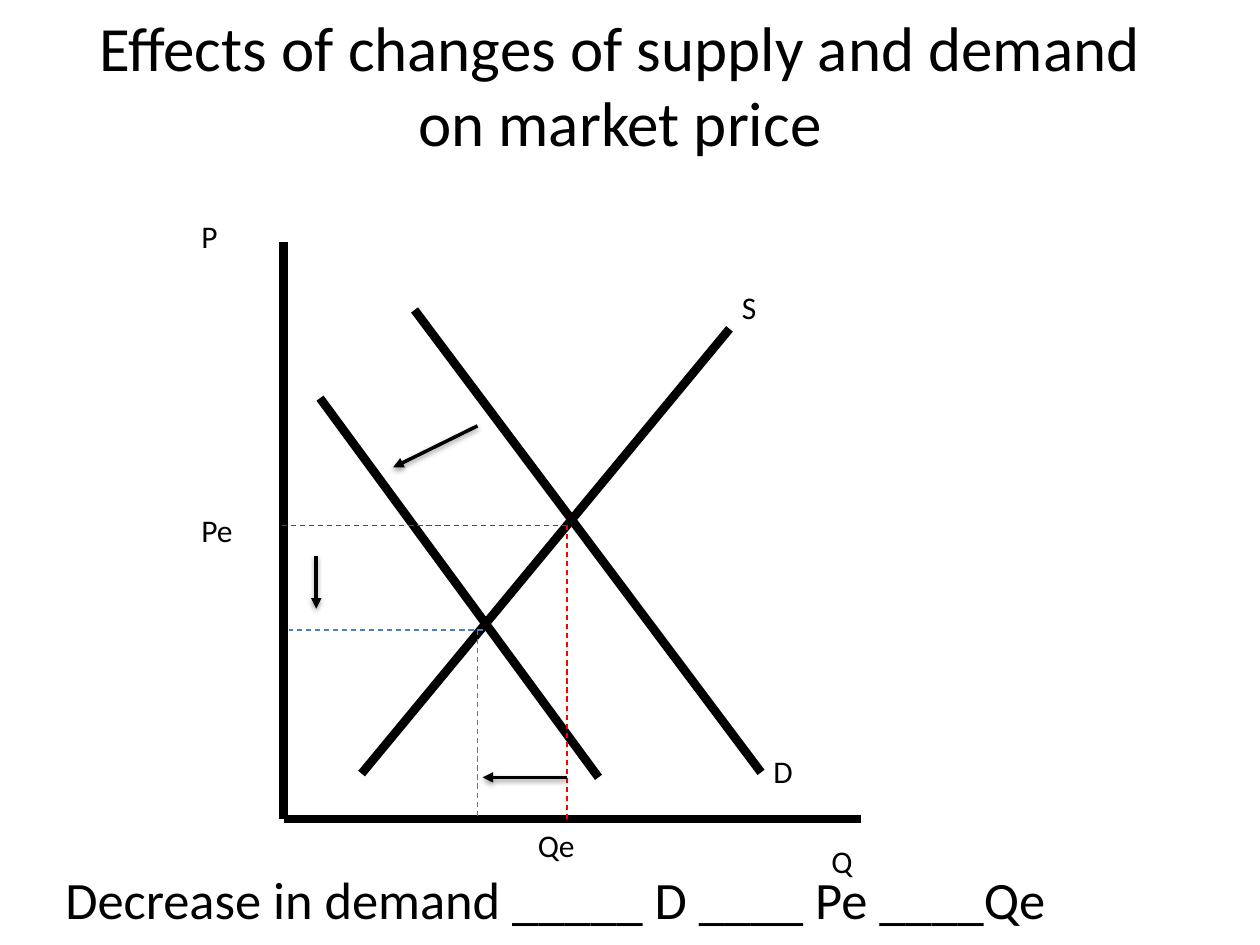
from dataclasses import dataclass

from lxml.etree import SubElement
from pptx import Presentation
from pptx.dml.color import RGBColor
from pptx.enum.dml import MSO_LINE
from pptx.enum.shapes import MSO_CONNECTOR
from pptx.enum.text import MSO_ANCHOR, MSO_AUTO_SIZE, PP_ALIGN
from pptx.oxml.ns import qn
from pptx.util import Inches, Pt


@dataclass(frozen=True)
class Theme:
    font: str = "Calibri"
    ink: str = "000000"
    before: str = "FF0000"
    after: str = "4B7EBC"
    title: int = 36
    exercise: int = 30
    label: int = 18
    curve: float = 5
    arrow: float = 2
    guide: float = 0.75


THEME = Theme()


def apply(target, values):
    for name, value in values.items():
        setattr(target, name, value)


def write(frame, wording, size, frame_format=None, paragraph_format=None):
    frame.text = wording
    apply(frame, {"word_wrap": True, **(frame_format or {})})
    paragraph = frame.paragraphs[0]
    apply(paragraph, paragraph_format or {})
    font = paragraph.runs[0].font
    apply(font, {"name": THEME.font, "size": Pt(size)})
    font.color.rgb = RGBColor.from_string(THEME.ink)


def add_text(slide, box, wording, size, paragraph_format=None):
    frame = slide.shapes.add_textbox(*map(Inches, box)).text_frame
    write(frame, wording, size, {"auto_size": MSO_AUTO_SIZE.SHAPE_TO_FIT_TEXT},
          paragraph_format)


def add_line(slide, box, start, end, color, width, dash=None):
    left, top = box[:2]
    ends = (left + start[0], top + start[1], left + end[0], top + end[1])
    line = slide.shapes.add_connector(MSO_CONNECTOR.STRAIGHT, *map(Inches, ends))
    line.line.color.rgb = RGBColor.from_string(color)
    apply(line.line, {"width": Pt(width), "dash_style": dash})
    effects = SubElement(line._element.spPr, qn("a:effectLst"))
    return line, effects


def add_arrow(slide, box, start, end):
    arrow, effects = add_line(slide, box, start, end, THEME.ink, THEME.arrow)
    SubElement(arrow.line._get_or_add_ln(), qn("a:tailEnd"), type="triangle")
    shadow = SubElement(effects, qn("a:outerShdw"), blurRad=str(Pt(3.1)),
                        dist=str(Pt(1.6)), dir="5400000", rotWithShape="0")
    shade = SubElement(shadow, qn("a:srgbClr"), val=THEME.ink)
    SubElement(shade, qn("a:alpha"), val="38000")


def place_title(slide, box):
    title = slide.shapes.title
    apply(title, dict(zip(("left", "top", "width", "height"), map(Inches, box))))
    write(title.text_frame,
          "Effects of changes of supply and demand on market price", THEME.title,
          {"auto_size": MSO_AUTO_SIZE.NONE, "vertical_anchor": MSO_ANCHOR.MIDDLE},
          {"alignment": PP_ALIGN.CENTER})


def place_graph(slide, box):
    left, top, width, height = box
    old_quantity, old_price = 2.25, 2.25
    new_quantity, new_price = 1.54, 3.08

    price_axis = (0, 0), (0, height)
    quantity_axis = (width, height), (0, height)
    supply = (3.54, 0.69), (0.62, 4.22)
    demand = (1.04, 0.54), (3.79, 4.21)
    lower_demand = (0.29, 1.24), (2.5, 4.25)
    for start, end in (price_axis, quantity_axis, supply, demand, lower_demand):
        add_line(slide, box, start, end, THEME.ink, THEME.curve)

    guides = (
        ((old_quantity, old_price), (-0.04, old_price), THEME.before),
        ((old_quantity, height), (old_quantity, old_price), THEME.before),
        ((new_quantity + 0.04, new_price), (0.04, new_price), THEME.after),
        ((new_quantity, new_price), (new_quantity, height), THEME.after),
    )
    for start, end, color in guides:
        add_line(slide, box, start, end, color, THEME.guide, MSO_LINE.DASH)

    demand_shift = (1.54, 1.46), (0.87, 1.79)
    price_fall = (0.26, 2.49), (0.26, 2.91)
    quantity_fall = (old_quantity, 4.25), (1.58, 4.25)
    for start, end in (demand_shift, price_fall, quantity_fall):
        add_arrow(slide, box, start, end)

    labels = {
        "P": (-0.75, -0.25),
        "Q": (4.25, 4.71),
        "D": (3.79, 4),
        "S": (3.54, 0.32),
        "Pe": (-0.75, 2.09),
        "Qe": (1.92, 4.59),
    }
    for wording, (x, y) in labels.items():
        add_text(slide, (left + x, top + y, 1, 0.4), wording, THEME.label)


def place_exercise(slide, box):
    add_text(slide, box, "Decrease in demand _____ D ____ Pe ____Qe",
             THEME.exercise)


def main():
    deck = Presentation()
    apply(deck, {"slide_width": Inches(10), "slide_height": Inches(7.5)})
    slide = deck.slides.add_slide(deck.slide_layouts[5])
    place_title(slide, (0.42, 0.04, 9, 1.25))
    place_graph(slide, (2.25, 1.92, 4.58, 4.58))
    place_exercise(slide, (0.42, 6.83, 9.5, 0.6))
    deck.save("out.pptx")


if __name__ == "__main__":
    main()
